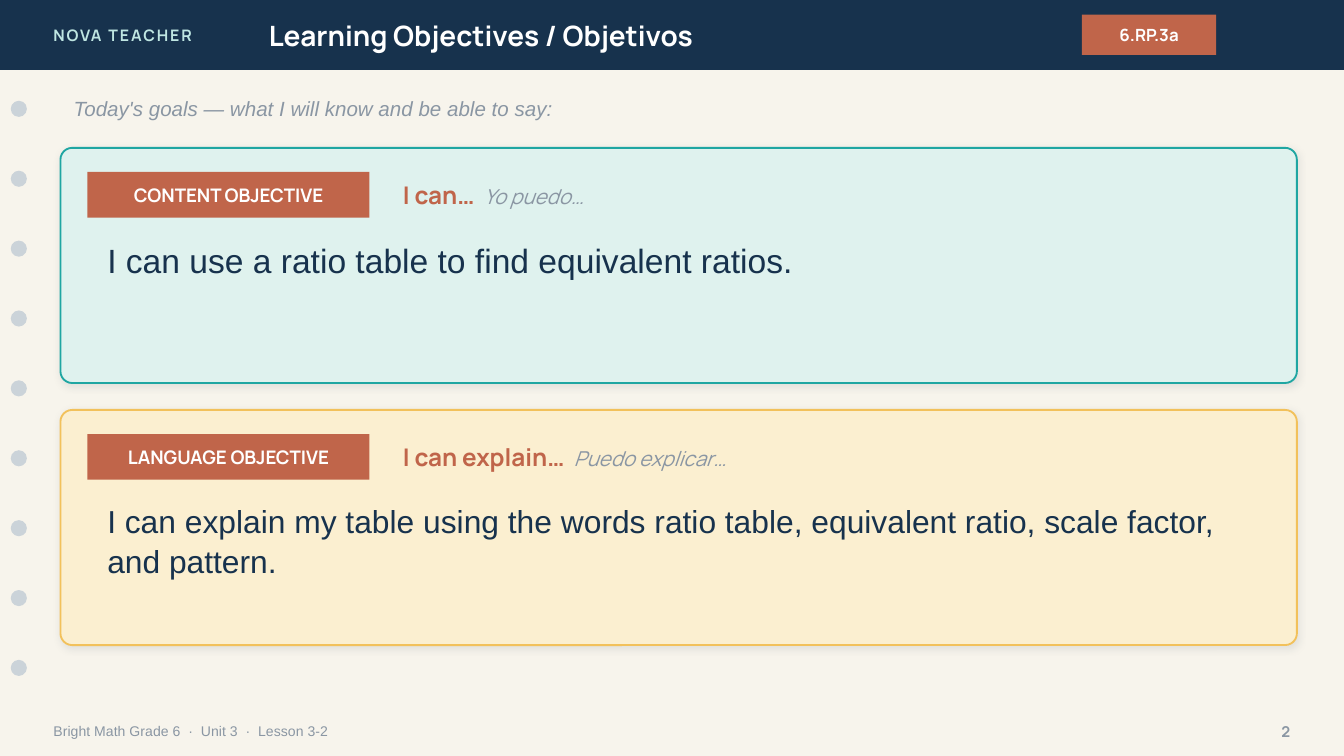
from dataclasses import dataclass

from lxml.etree import SubElement
from pptx import Presentation
from pptx.dml.color import RGBColor
from pptx.enum.shapes import MSO_SHAPE
from pptx.enum.text import MSO_ANCHOR, MSO_AUTO_SIZE, PP_ALIGN
from pptx.oxml.ns import qn
from pptx.util import Inches, Pt


@dataclass(frozen=True)
class TextStyle:
    size: float
    color: str
    font: str = "Manrope"
    bold: bool = False
    italic: bool = False
    spacing: float = 0


class Theme:
    paper = "F7F4EC"
    navy = "17324D"
    clay = "C0654A"
    grey = "8A96A3"
    white = "FFFFFF"
    hole = "CBD3D9"
    shadow = "1C2E42"
    mint, teal = "DFF2EE", "1FA6A2"
    cream, gold = "FBEFD0", "F2C15B"

    brand = TextStyle(8.5, "BFE6E2", bold=True, spacing=1)
    title = TextStyle(15, white, bold=True)
    standard = TextStyle(9, white, bold=True)
    tag = TextStyle(10, white, bold=True)
    intro = TextStyle(11, grey, "Arial", italic=True)
    stem = TextStyle(13, clay, bold=True)
    stem_gap = TextStyle(13, clay, bold=True, spacing=2.5)
    translation = TextStyle(11, grey, italic=True)
    content_goal = TextStyle(18, navy, "Arial")
    language_goal = TextStyle(17, navy, "Arial")
    footer = TextStyle(7.5, grey, "Arial")
    footer_gap = TextStyle(7.5, grey, "Arial", spacing=2.1)
    page_number = TextStyle(8, grey, bold=True)


def rgb(color):
    return RGBColor.from_string(color)


def style_run(run, style):
    font = run.font
    font.name, font.size = style.font, Pt(style.size)
    font.bold, font.italic = style.bold, style.italic
    font.color.rgb = rgb(style.color)
    if style.spacing:
        run._r.get_or_add_rPr().set("spc", str(round(style.spacing * 100)))


def write(shape, runs, align=PP_ALIGN.LEFT, anchor=MSO_ANCHOR.MIDDLE):
    """Fill the first paragraph with (text, style) pairs."""
    frame = shape.text_frame
    frame.word_wrap = True
    frame.auto_size = MSO_AUTO_SIZE.NONE
    frame.vertical_anchor = anchor
    paragraph = frame.paragraphs[0]
    paragraph.alignment = align
    for text, style in runs:
        run = paragraph.add_run()
        run.text = text
        style_run(run, style)
    return paragraph


def add_text(slide, left, top, width, height, runs, **layout):
    box = slide.shapes.add_textbox(
        Inches(left), Inches(top), Inches(width), Inches(height))
    return write(box, runs, **layout)


def add_block(slide, kind, left, top, width, height, fill):
    shape = slide.shapes.add_shape(
        kind, Inches(left), Inches(top), Inches(width), Inches(height))
    shape.shadow.inherit = False
    shape.fill.solid()
    shape.fill.fore_color.rgb = rgb(fill)
    shape.line.fill.background()
    return shape


def add_badge(slide, left, top, width, height, text, style):
    badge = add_block(slide, MSO_SHAPE.RECTANGLE, left, top, width, height, Theme.clay)
    write(badge, [(text, style)], align=PP_ALIGN.CENTER)


def add_soft_shadow(shape):
    effects = shape._element.spPr.find(qn("a:effectLst"))
    shadow = SubElement(effects, qn("a:outerShdw"), blurRad=str(Pt(4)),
                        dist=str(Pt(1)), dir="5400000", algn="bl", rotWithShape="0")
    color = SubElement(shadow, qn("a:srgbClr"), val=Theme.shadow)
    SubElement(color, qn("a:alpha"), val="10000")


def add_header(slide):
    height = 0.52
    add_block(slide, MSO_SHAPE.RECTANGLE, 0, 0, 10, height, Theme.navy)
    add_text(slide, 0.3, 0, 2.4, height, [("NOVA TEACHER", Theme.brand)])
    title = slide.shapes.title
    title.left, title.top = Inches(1.9), Inches(0)
    title.width, title.height = Inches(5.6), Inches(height)
    write(title, [("Learning Objectives / Objetivos", Theme.title)])
    # The placeholder comes first in the tree; bring it in front of the bar.
    slide.shapes._spTree.append(title._element)
    add_badge(slide, 8.05, 0.11, 1, 0.3, "6.RP.3a", Theme.standard)


def add_binder_holes(slide, count=9, first_top=0.75, pitch=0.52, size=0.12):
    for index in range(count):
        add_block(slide, MSO_SHAPE.OVAL, 0.08, first_top + index * pitch,
                  size, size, Theme.hole)


def add_footer(slide):
    gap = (" ", Theme.footer_gap)
    separator = [gap, ("·", Theme.footer), gap]
    add_text(slide, 0.3, 5.3, 7, 0.28, [
        ("Bright Math Grade 6", Theme.footer), *separator,
        ("Unit 3", Theme.footer), *separator, ("Lesson 3-2", Theme.footer)])
    add_text(slide, 9.2, 5.3, 0.5, 0.28, [("2", Theme.page_number)],
             align=PP_ALIGN.RIGHT)


def add_objective_card(slide, top, fill, border, tag, stem, translation, goal, goal_style):
    card = add_block(slide, MSO_SHAPE.ROUNDED_RECTANGLE, 0.45, top, 9.2, 1.75, fill)
    card.adjustments[0] = 0.05
    card.line.color.rgb = rgb(border)
    card.line.width = Pt(1)
    add_soft_shadow(card)
    add_badge(slide, 0.65, top + 0.18, 2.1, 0.34, tag, Theme.tag)
    add_text(slide, 2.9, top + 0.18, 6.6, 0.34, [
        (stem, Theme.stem), (" ", Theme.stem_gap), (translation, Theme.translation)])
    paragraph = add_text(slide, 0.7, top + 0.62, 8.7, 1, [(goal, goal_style)],
                         anchor=MSO_ANCHOR.TOP)
    paragraph.line_spacing = 1.05


def main():
    presentation = Presentation()
    presentation.slide_width = Inches(10)
    presentation.slide_height = Inches(10) * 9 // 16
    slide = presentation.slides.add_slide(presentation.slide_layouts[5])
    slide.background.fill.solid()
    slide.background.fill.fore_color.rgb = rgb(Theme.paper)

    add_header(slide)
    add_binder_holes(slide)
    add_footer(slide)
    add_text(slide, 0.45, 0.66, 9.2, 0.3, [
        ("Today's goals — what I will know and be able to say:", Theme.intro)])
    add_objective_card(
        slide, 1.1, Theme.mint, Theme.teal, "CONTENT OBJECTIVE",
        "I can…", "Yo puedo…",
        "I can use a ratio table to find equivalent ratios.", Theme.content_goal)
    add_objective_card(
        slide, 3.05, Theme.cream, Theme.gold, "LANGUAGE OBJECTIVE",
        "I can explain…", "Puedo explicar…",
        "I can explain my table using the words ratio table, equivalent ratio, "
        "scale factor, and pattern.", Theme.language_goal)
    presentation.save("out.pptx")


if __name__ == "__main__":
    main()
